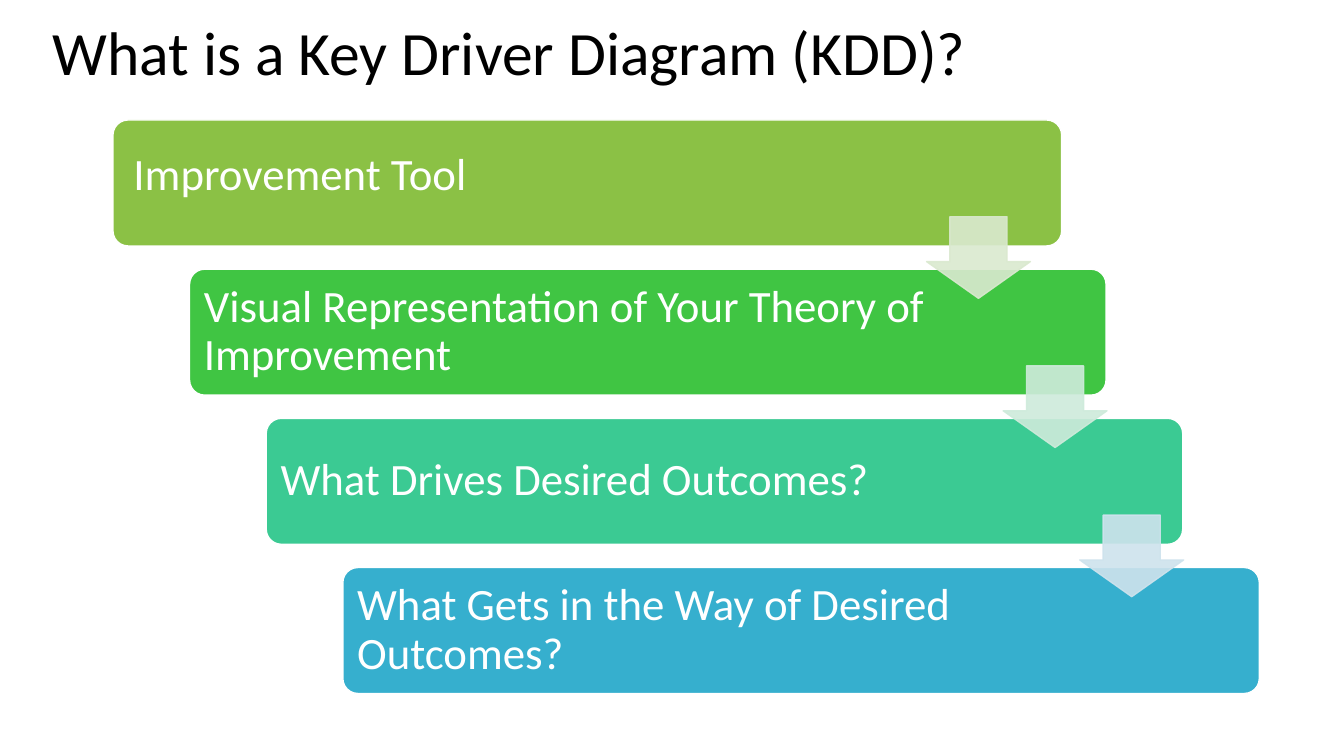
from lxml import etree
from pptx import Presentation
from pptx.dml.color import RGBColor
from pptx.enum.shapes import MSO_SHAPE
from pptx.enum.text import MSO_ANCHOR, MSO_AUTO_SIZE, PP_ALIGN
from pptx.oxml.ns import qn
from pptx.util import Pt

BAR = MSO_SHAPE.ROUNDED_RECTANGLE
ARROW = MSO_SHAPE.DOWN_ARROW
MIDDLE, BOTTOM = MSO_ANCHOR.MIDDLE, MSO_ANCHOR.BOTTOM
NO_FIT = MSO_AUTO_SIZE.NONE
LEFT = PP_ALIGN.LEFT

PX = 9144  # 100 px to the inch
STEP_X, STEP_Y = 76, 148
FONT = "Calibri"
COLORS = {
    "black": "000000", "white": "FFFFFF",
    "lime": "8BC145", "green": "40C543", "mint": "3BCA93", "blue": "36AFCE",
    "pale lime": "DAE9CF", "pale mint": "CEEBDB", "pale blue": "CEE3ED",
}

# Text, color, width, insets (left, top, right, bottom)
INSET = (10, 10, 145, 10)
STEPS = [
    ("Improvement Tool", "lime", 941, (16, 0, 56, 14)),
    ("Visual Representation of Your Theory of Improvement", "green", 909, INSET),
    ("What Drives Desired Outcomes?", "mint", 909, INSET),
    ("What Gets in the Way of Desired Outcomes?", "blue", 909, INSET),
]
ARROWS = ["pale lime", "pale mint", "pale blue"]


def px(num):
    return num * PX


def rgb(name):
    return RGBColor.from_string(COLORS[name])


def set_all(item, **values):
    for name, value in values.items():
        setattr(item, name, value)


def place(shape, left, top, width, height):
    set_all(shape, left=px(left), top=px(top),
            width=px(width), height=px(height))


def write(shape, text, size, color, anchor, after=0):
    frame = shape.text_frame
    set_all(frame, text=text, word_wrap=True, auto_size=NO_FIT,
            vertical_anchor=anchor)
    para = frame.paragraphs[0]
    set_all(para, alignment=LEFT, line_spacing=0.9, space_after=Pt(after))
    font = para.runs[0].font
    set_all(font, name=FONT, size=Pt(size))
    font.color.rgb = rgb(color)


def add_form(slide, kind, box, fill, line, adjust):
    shape = slide.shapes.add_shape(kind, *map(px, box))
    shape.shadow.inherit = False
    shape.fill.solid()
    shape.fill.fore_color.rgb = rgb(fill)
    shape.line.color.rgb = rgb(line)
    shape.line.width = Pt(1)
    for num, value in enumerate(adjust):
        shape.adjustments[num] = value
    return shape


def add_bar(slide, num, text, color, width, inset):
    box = (112 + STEP_X * num, 119 + STEP_Y * num, width, 125)
    bar = add_form(slide, BAR, box, color, "white", [0.12])
    write(bar, text, 32, "white", MIDDLE)
    sides = ("margin_left", "margin_top", "margin_right", "margin_bottom")
    set_all(bar.text_frame, **dict(zip(sides, map(px, inset))))


def add_arrow(slide, num, color):
    box = (919 + STEP_X * num, 215 + STEP_Y * num, 103, 81)
    arrow = add_form(slide, ARROW, box, color, color, [0.55, 0.45])
    # Fill and line are 90% opaque
    for tone in arrow.element.spPr.iter(qn("a:srgbClr")):
        etree.SubElement(tone, qn("a:alpha"), val="90000")


def main():
    deck = Presentation()
    set_all(deck, slide_width=px(1333), slide_height=px(750))
    slide = deck.slides.add_slide(deck.slide_layouts[5])

    # Title
    title = slide.shapes.title
    place(title, 42, -18, 1028, 111)
    write(title, "What is a Key Driver Diagram (KDD)?", 44, "black", BOTTOM, 6)

    # Staircase of bars, then the arrows between them
    for num, step in enumerate(STEPS):
        add_bar(slide, num, *step)
    for num, color in enumerate(ARROWS):
        add_arrow(slide, num, color)

    deck.save("out.pptx")


if __name__ == "__main__":
    main()
